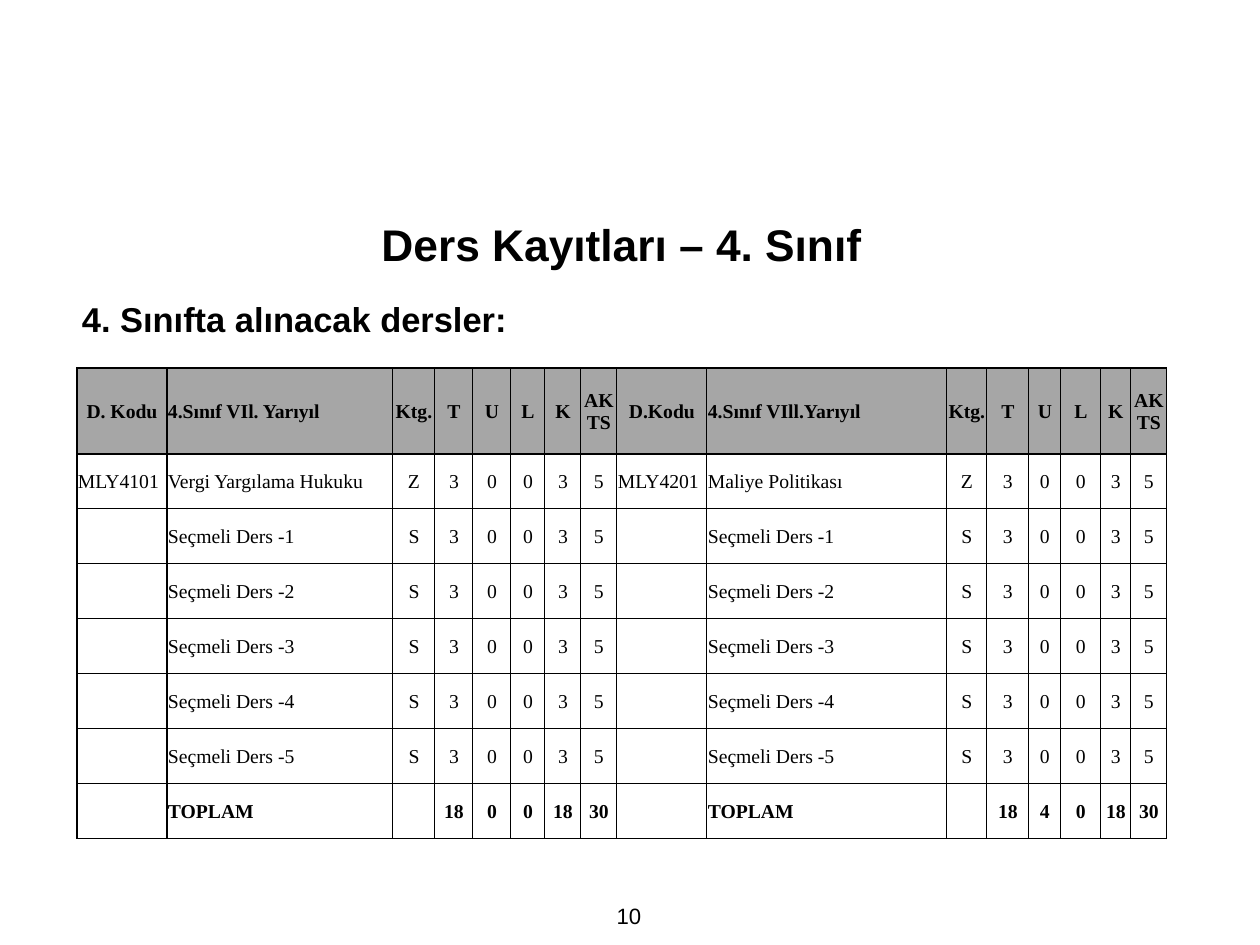
import dataclasses

import lxml.etree
import pptx
import pptx.dml.color
import pptx.enum.text
import pptx.oxml.ns
import pptx.util

EMU_PER_PX = 10320
ALIGN = pptx.enum.text.PP_ALIGN
MIDDLE = pptx.enum.text.MSO_ANCHOR.MIDDLE
TOP = pptx.enum.text.MSO_ANCHOR.TOP


@dataclasses.dataclass(frozen=True)
class Theme:
    text: str = "000000"
    border: str = "000000"
    header_fill: str = "A6A6A6"
    body_fill: str = "FFFFFF"
    heading_font: str = "Arial"
    table_font: str = "Times New Roman"
    title_size: int = 36
    subtitle_size: int = 28
    number_size: int = 18
    table_size: int = 16
    border_width: int = 1


THEME = Theme()

SEMESTER_WIDTHS = [
    [90, 226, 42, 38, 38, 34, 36, 36],
    [90, 240, 40, 42, 32, 40, 30, 36],
]
ROW_HEIGHTS = [86] + [55] * 7
CODE, COURSE = 0, 1


def px(length):
    return pptx.util.Emu(length * EMU_PER_PX)


def rgb(colour):
    return pptx.dml.color.RGBColor.from_string(colour)


def semester_rows(code_label, semester, code, course, total_practice):
    """Header, compulsory course, five electives and totals of one semester."""
    hours = ["3", "0", "0", "3", "5"]
    electives = [["", f"Seçmeli Ders -{n}", "S", *hours] for n in range(1, 6)]
    return [
        [code_label, semester, "Ktg.", "T", "U", "L", "K", "AKTS"],
        [code, course, "Z", *hours],
        *electives,
        ["", "TOPLAM", "", "18", total_practice, "0", "18", "30"],
    ]


def add_run(paragraph, text, font, size, bold):
    run = paragraph.add_run()
    run.text = text
    run.font.name = font
    run.font.size = pptx.util.Pt(size)
    run.font.bold = bold
    run.font.color.rgb = rgb(THEME.text)


def fill_heading(shape, text, size, bold, align, anchor, wrap=True):
    frame = shape.text_frame
    frame.auto_size = pptx.enum.text.MSO_AUTO_SIZE.NONE
    frame.word_wrap = wrap
    frame.vertical_anchor = anchor
    frame.margin_left = frame.margin_right = px(5)
    frame.margin_top = frame.margin_bottom = px(5)
    paragraph = frame.paragraphs[0]
    paragraph.alignment = align
    add_run(paragraph, text, THEME.heading_font, size, bold)


def place_title(slide, box, text):
    title = slide.shapes.title
    title.left, title.top, title.width, title.height = map(px, box)
    fill_heading(title, text, THEME.title_size, True, ALIGN.CENTER, MIDDLE)


def add_subtitle(slide, box, text):
    subtitle = slide.shapes.add_textbox(*map(px, box))
    fill_heading(subtitle, text, THEME.subtitle_size, True, ALIGN.LEFT, MIDDLE)


def add_page_number(slide, box, text):
    number = slide.shapes.add_textbox(*map(px, box))
    fill_heading(number, text, THEME.number_size, False, ALIGN.CENTER, TOP, wrap=False)


def add_borders(cell):
    properties = cell._tc.get_or_add_tcPr()
    qn = pptx.oxml.ns.qn
    for side in ("a:lnL", "a:lnR", "a:lnT", "a:lnB"):
        line = lxml.etree.SubElement(
            properties, qn(side), w=str(pptx.util.Pt(THEME.border_width)))
        fill = lxml.etree.SubElement(line, qn("a:solidFill"))
        lxml.etree.SubElement(fill, qn("a:srgbClr"), val=THEME.border)


def format_cell(cell, text, fill, bold, align):
    add_borders(cell)
    cell.fill.solid()
    cell.fill.fore_color.rgb = rgb(fill)
    cell.vertical_anchor = MIDDLE
    cell.margin_left = cell.margin_right = cell.margin_top = px(1)
    cell.margin_bottom = 0
    paragraph = cell.text_frame.paragraphs[0]
    paragraph.alignment = align
    if text:
        add_run(paragraph, text, THEME.table_font, THEME.table_size, bold)


def add_course_table(slide, box, semesters):
    """Set the semesters side by side, each with its own column widths."""
    rows = [sum(parts, []) for parts in zip(*semesters)]
    widths = sum(SEMESTER_WIDTHS, [])
    table = slide.shapes.add_table(len(rows), len(widths), *map(px, box)).table
    table.first_row = table.horz_banding = False
    for column, width in zip(table.columns, widths):
        column.width = px(width)
    for row, height in zip(table.rows, ROW_HEIGHTS):
        row.height = px(height)

    for r, values in enumerate(rows):
        is_header = r == 0
        is_total = r == len(rows) - 1
        fill = THEME.header_fill if is_header else THEME.body_fill
        for c, value in enumerate(values):
            part = c % len(SEMESTER_WIDTHS[0])
            is_left = part == COURSE or (part == CODE and not is_header)
            align = ALIGN.LEFT if is_left else ALIGN.CENTER
            format_cell(table.cell(r, c), value, fill, is_header or is_total, align)


def build_course_slide(deck):
    title_only = deck.slide_layouts[5]
    slide = deck.slides.add_slide(title_only)
    place_title(slide, (129, 212, 985, 64), "Ders Kayıtları – 4. Sınıf")
    add_subtitle(slide, (77, 293, 1066, 51), "4. Sınıfta alınacak dersler:")
    autumn = semester_rows(
        "D. Kodu", "4.Sınıf VIl. Yarıyıl", "MLY4101", "Vergi Yargılama Hukuku", "0")
    spring = semester_rows(
        "D.Kodu", "4.Sınıf VIll.Yarıyıl", "MLY4201", "Maliye Politikası", "4")
    table_width = sum(map(sum, SEMESTER_WIDTHS))
    add_course_table(slide, (77, 368, table_width, sum(ROW_HEIGHTS)), [autumn, spring])
    add_page_number(slide, (611, 897, 36, 37), "10")


def main():
    deck = pptx.Presentation()
    deck.slide_width, deck.slide_height = px(1260), px(945)
    build_course_slide(deck)
    deck.save("out.pptx")


if __name__ == "__main__":
    main()
